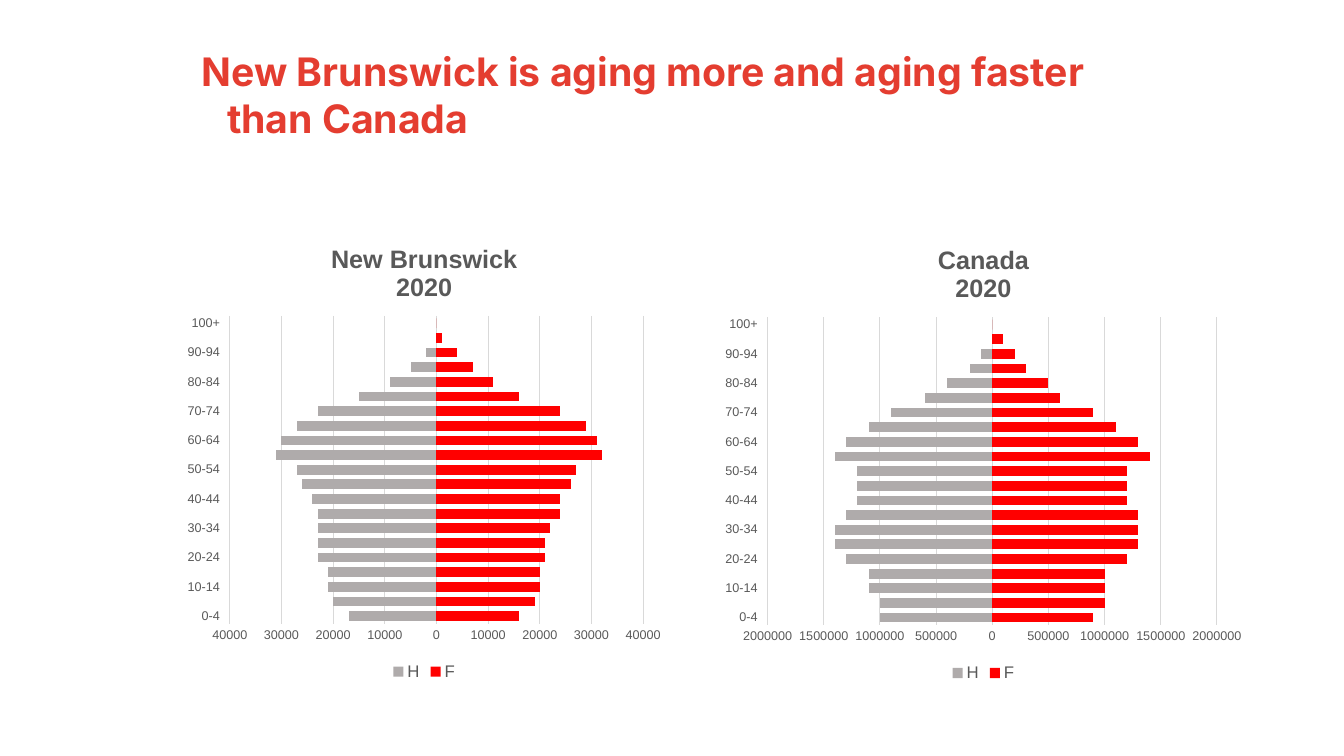
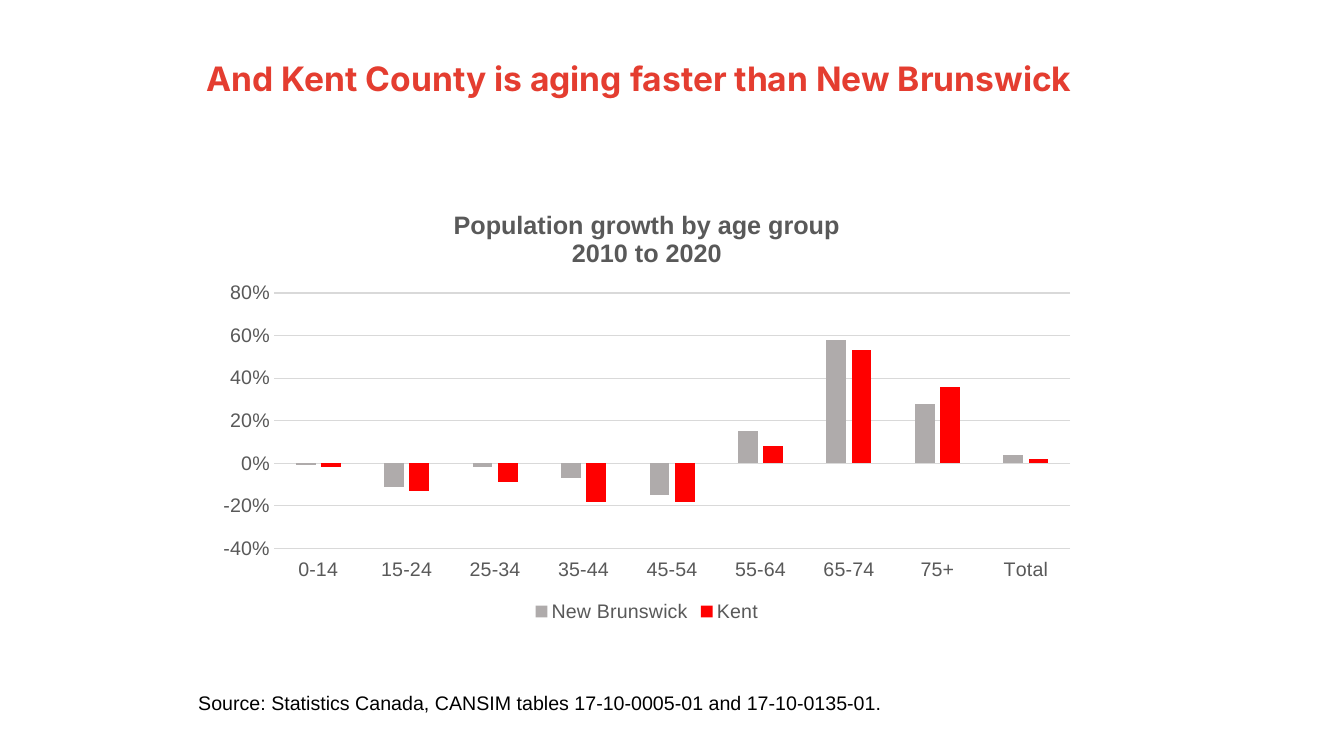
"""Build two slides on how New Brunswick, Canada and Kent County are aging."""
import pptx
import pptx.chart.data
import pptx.dml.color
import pptx.enum.chart
import pptx.enum.text
import pptx.util

Pt = pptx.util.Pt
RGBColor = pptx.dml.color.RGBColor
Kind = pptx.enum.chart.XL_CHART_TYPE

CORAL = RGBColor(0xE4, 0x3D, 0x30)
RED = RGBColor(0xFF, 0x00, 0x00)
GRAY = RGBColor(0xAF, 0xAB, 0xAB)
SLATE = RGBColor(0x59, 0x59, 0x59)
SILVER = RGBColor(0xD9, 0xD9, 0xD9)
BLACK = RGBColor(0x00, 0x00, 0x00)


def style(font, size, color, name="Arial", bold=False):
    font.size = Pt(size)
    font.color.rgb = color
    font.name = name
    font.bold = bold


ages = [f"{low}-{low + 4}" for low in range(0, 100, 5)] + ["100+"]
groups = ["0-14", "15-24", "25-34", "35-44", "45-54", "55-64", "65-74", "75+", "Total"]

pages = [
    {
        "title": "New Brunswick is aging more and aging faster than Canada",
        "size": 28,
        "box": (119, 30, 699, 94),
        "charts": [
            {
                "title": ["New Brunswick", "2020"],
                "box": (127, 161, 352, 328),
                "kind": Kind.BAR_STACKED,
                "cats": ages,
                "unit": 1000,
                "series": {
                    "H": [-17, -20, -21, -21, -23, -23, -23, -23, -24, -26, -27,
                          -31, -30, -27, -23, -15, -9, -5, -2, 0, 0],
                    "F": [16, 19, 20, 20, 21, 21, 22, 24, 24, 26, 27,
                          32, 31, 29, 24, 16, 11, 7, 4, 1, 0],
                },
                "scale": (-40000, 40000, 10000),
                "format": "0;0",
                "sizes": (9, 12),
                "gap": 50,
                "lap": 100,
            },
            {
                "title": ["Canada", "2020"],
                "box": (510.5, 162, 384, 328),
                "kind": Kind.BAR_STACKED,
                "cats": ages,
                "unit": 100000,
                "series": {
                    "H": [-10, -10, -11, -11, -13, -14, -14, -13, -12, -12, -12,
                          -14, -13, -11, -9, -6, -4, -2, -1, 0, 0],
                    "F": [9, 10, 10, 10, 12, 13, 13, 13, 12, 12, 12,
                          14, 13, 11, 9, 6, 5, 3, 2, 1, 0],
                },
                "scale": (-2000000, 2000000, 500000),
                "format": "0;0",
                "sizes": (9, 12),
                "gap": 50,
                "lap": 100,
            },
        ],
    },
    {
        "title": "And Kent County is aging faster than New Brunswick",
        "size": 24,
        "box": (122.5, 37.5, 699, 112),
        "charts": [
            {
                "title": ["Population growth by age group", "2010 to 2020"],
                "box": (147, 137.5, 630, 310),
                "kind": Kind.COLUMN_CLUSTERED,
                "cats": groups,
                "unit": 1,
                "series": {
                    "New Brunswick": [-0.01, -0.11, -0.02, -0.07, -0.15, 0.15, 0.58, 0.28, 0.04],
                    "Kent": [-0.02, -0.13, -0.09, -0.18, -0.18, 0.08, 0.53, 0.36, 0.02],
                },
                "scale": (-0.4, 0.8, 0.2),
                "format": "0%",
                "sizes": (14, 14),
                "gap": 219,
                "lap": -27,
            },
        ],
    },
]

deck = pptx.Presentation()
deck.slide_width = Pt(960)
deck.slide_height = Pt(540)

for page in pages:
    slide = deck.slides.add_slide(deck.slide_layouts[5])
    head = slide.shapes.title
    head.left, head.top, head.width, head.height = map(Pt, page["box"])
    frame = head.text_frame
    frame.auto_size = pptx.enum.text.MSO_AUTO_SIZE.NONE
    frame.vertical_anchor = pptx.enum.text.MSO_ANCHOR.TOP
    para = frame.paragraphs[0]
    para.alignment = pptx.enum.text.PP_ALIGN.LEFT
    props = para._p.get_or_add_pPr()
    props.set("marL", str(Pt(36)))
    props.set("indent", str(Pt(-18)))
    run = para.add_run()
    run.text = page["title"]
    style(run.font, page["size"], CORAL, "Inter", True)

    for plan in page["charts"]:
        data = pptx.chart.data.CategoryChartData(number_format=plan["format"])
        data.categories = plan["cats"]
        for name, vals in plan["series"].items():
            data.add_series(name, [val * plan["unit"] for val in vals])
        chart = slide.shapes.add_chart(plan["kind"], *map(Pt, plan["box"]), data).chart
        style(chart.font, 10, BLACK)

        chart.has_title = True
        frame = chart.chart_title.text_frame
        for row, text in enumerate(plan["title"]):
            para = frame.add_paragraph() if row else frame.paragraphs[0]
            run = para.add_run()
            run.text = text
            style(run.font, 18, SLATE, bold=True)

        small, large = plan["sizes"]
        chart.has_legend = True
        chart.legend.position = pptx.enum.chart.XL_LEGEND_POSITION.BOTTOM
        chart.legend.include_in_layout = False
        style(chart.legend.font, large, SLATE)

        plot = chart.plots[0]
        plot.vary_by_categories = False
        plot.gap_width = plan["gap"]
        plot.overlap = plan["lap"]
        for series, color in zip(plot.series, (GRAY, RED)):
            series.invert_if_negative = False
            series.format.fill.solid()
            series.format.fill.fore_color.rgb = color

        base, value = chart.category_axis, chart.value_axis
        for axis in (base, value):
            axis.major_tick_mark = pptx.enum.chart.XL_TICK_MARK.NONE
            axis.minor_tick_mark = pptx.enum.chart.XL_TICK_MARK.NONE
            style(axis.tick_labels.font, small, SLATE)
        base.tick_label_position = pptx.enum.chart.XL_TICK_LABEL_POSITION.LOW
        value.minimum_scale, value.maximum_scale, value.major_unit = plan["scale"]
        value.tick_labels.number_format = plan["format"]
        value.tick_labels.number_format_is_linked = False
        value.format.line.fill.background()
        value.has_major_gridlines = True
        for line in (base.format.line, value.major_gridlines.format.line):
            line.color.rgb = SILVER
            line.width = Pt(0.75)

note = slide.shapes.add_textbox(Pt(134.5), Pt(490), Pt(674), Pt(24.5))
note.text_frame.word_wrap = True
run = note.text_frame.paragraphs[0].add_run()
run.text = "Source: Statistics Canada, CANSIM tables 17-10-0005-01 and 17-10-0135-01."
style(run.font, 14, BLACK)

deck.save("out.pptx")
